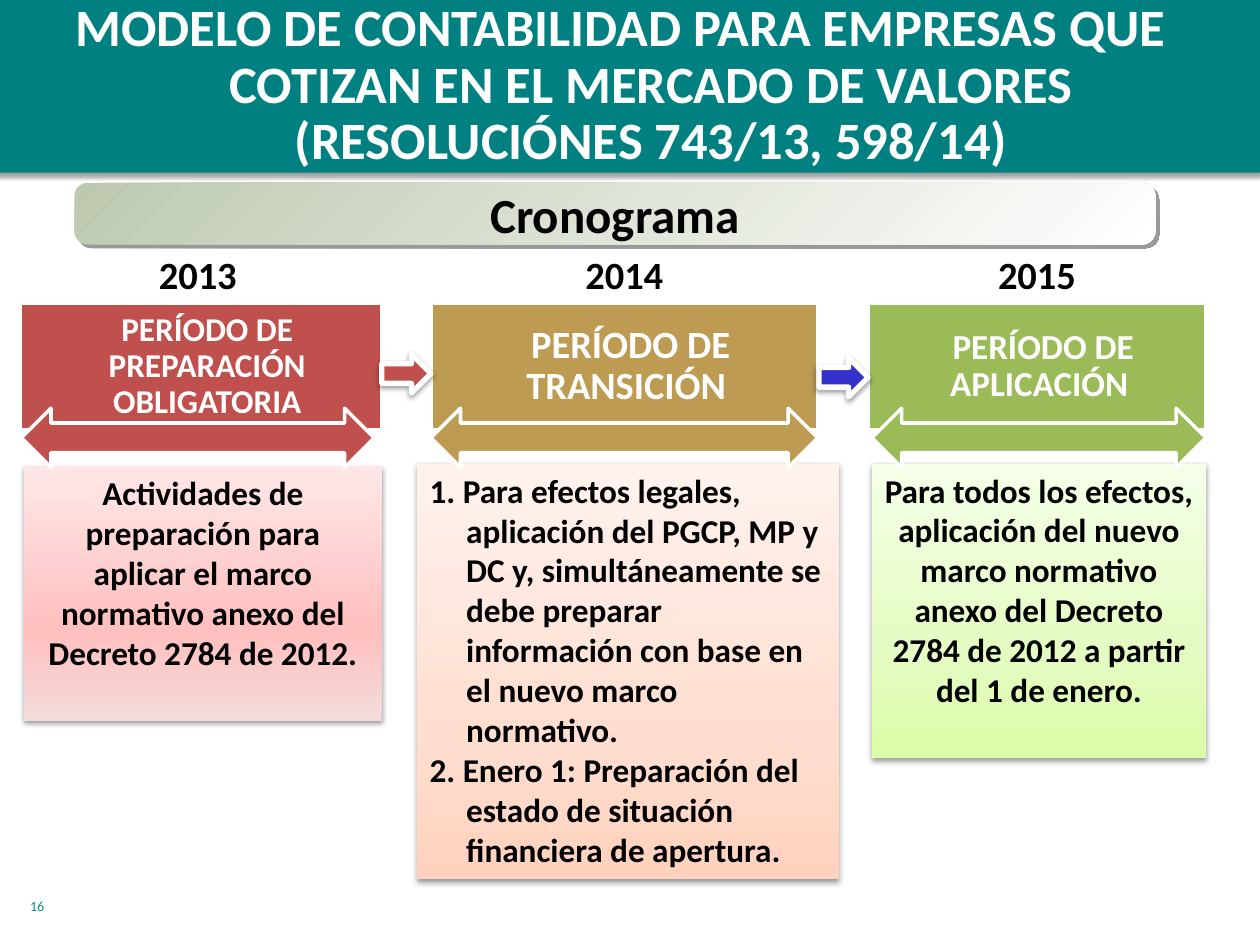
from lxml import etree
from pptx import Presentation
from pptx.dml.color import RGBColor
from pptx.enum.shapes import MSO_SHAPE
from pptx.enum.text import MSO_ANCHOR, MSO_AUTO_SIZE, PP_ALIGN
from pptx.oxml.ns import qn
from pptx.util import Inches, Pt

RECTANGLE = MSO_SHAPE.RECTANGLE
ROUNDED = MSO_SHAPE.ROUNDED_RECTANGLE
RIGHT_ARROW = MSO_SHAPE.RIGHT_ARROW
DOUBLE_ARROW = MSO_SHAPE.LEFT_RIGHT_ARROW
TOP, MIDDLE = MSO_ANCHOR.TOP, MSO_ANCHOR.MIDDLE
LEFT, CENTER = PP_ALIGN.LEFT, PP_ALIGN.CENTER
NO_AUTOFIT = MSO_AUTO_SIZE.NONE

COLORS = {
    "teal": "008080", "number": "00918E", "white": "FFFFFF", "black": "000000",
    "sage": "BDC9AF", "red": "C0504D", "gold": "BD9B53", "green": "9BBB59",
    "blue": "3333CC",
}
RED_FADE = [(0, "F2DCDB"), (35, "FFC0BF"), (100, "FFE7E7")]
GOLD_FADE = [(0, "FFD2BD"), (35, "FFDED0"), (100, "FFF2ED")]
GREEN_FADE = [(0, "DAFDA7"), (35, "E4FCC2"), (100, "F5FFE7")]
SAGE_FADE = [(0, COLORS["sage"]), (100, COLORS["white"])]


class SlideBuilder:
    font_name = "Calibri"

    def __init__(self, page):
        self.page = page

    def place(self, shape, at):
        shape.left, shape.top, shape.width, shape.height = map(Inches, at)

    def shape(self, kind, at, color=None, line_width=None):
        shape = self.page.shapes.add_shape(kind, *map(Inches, at))
        shape.shadow.inherit = False
        if color:
            shape.fill.solid()
            shape.fill.fore_color.rgb = RGBColor.from_string(COLORS[color])
        if line_width:
            shape.line.color.rgb = RGBColor.from_string(COLORS["white"])
            shape.line.width = Pt(line_width)
        else:
            shape.line.fill.background()
        return shape

    def fade(self, shape, stops, angle=90):
        """Fill with a linear gradient; the angle runs counter-clockwise."""
        shape.fill.gradient()
        shape.fill.gradient_angle = angle
        stop_list = shape._element.spPr.find(qn("a:gradFill")).find(qn("a:gsLst"))
        for old_stop in list(stop_list):
            stop_list.remove(old_stop)
        for position, color in stops:
            stop = etree.SubElement(stop_list, qn("a:gs"), pos=str(position * 1000))
            etree.SubElement(stop, qn("a:srgbClr"), val=color)

    def shadow(self, shape, blur=3.1, distance=1.6, angle=90, opacity=38):
        shape.shadow.inherit = False
        effects = shape._element.spPr.find(qn("a:effectLst"))
        outer = etree.SubElement(
            effects, qn("a:outerShdw"), blurRad=str(Pt(blur)), dist=str(Pt(distance)),
            dir=str(angle * 60000), algn="ctr", rotWithShape="0")
        color = etree.SubElement(outer, qn("a:srgbClr"), val=COLORS["black"])
        etree.SubElement(color, qn("a:alpha"), val=str(opacity * 1000))

    def set_text(self, shape, paragraphs, size, color="black", bold=True, align=CENTER,
                 anchor=TOP, hanging=0, line_spacing=None, insets=(0.1, 0.1)):
        frame = shape.text_frame
        frame.word_wrap = True
        frame.auto_size = NO_AUTOFIT
        frame.vertical_anchor = anchor
        frame.margin_left, frame.margin_right = map(Inches, insets)
        frame.margin_top = frame.margin_bottom = Inches(0.05)
        for index, text in enumerate(paragraphs):
            para = frame.paragraphs[0] if index == 0 else frame.add_paragraph()
            para.text = text
            para.alignment = align
            para.space_before = Pt(0)
            if line_spacing:
                para.line_spacing = line_spacing
            properties = para._p.get_or_add_pPr()
            properties.set("marL", str(Inches(hanging)))
            properties.set("indent", str(-Inches(hanging)))
            etree.SubElement(properties, qn("a:buNone"))
            para.font.name = self.font_name
            para.font.size = Pt(size)
            para.font.bold = bold
            para.font.color.rgb = RGBColor.from_string(COLORS[color])

    def text(self, at, text, size, **style):
        box = self.page.shapes.add_textbox(*map(Inches, at))
        self.set_text(box, [text], size, **style)

    def title(self, at, text):
        band = self.shape(RECTANGLE, (-0.04, -0.03, 10.04, 1.4), "teal")
        self.shadow(band)
        title = self.page.shapes.title
        band._element.addnext(title._element)  # keeps the title above its band
        self.place(title, at)
        self.set_text(title, [text], 30, "white", hanging=0.49, line_spacing=0.9)

    def banner(self, at, text):
        banner = self.shape(ROUNDED, at)
        banner.adjustments[0] = 0.217
        self.fade(banner, SAGE_FADE, 315)
        self.shadow(banner, blur=0, distance=3, angle=45, opacity=40)
        self.set_text(banner, [text], 28, anchor=MIDDLE)

    def period(self, left, width, text, size, color):
        box = self.shape(RECTANGLE, (left, 2.41, width, 1), color, 2)
        self.set_text(box, [text], size, "white", anchor=MIDDLE, line_spacing=0.9,
                      insets=(0.62, 0.52))

    def detail(self, at, text, stops):
        box = self.shape(RECTANGLE, at)
        self.fade(box, stops)
        self.shadow(box)
        self.set_text(box, [text], 19)

    def numbered_detail(self, at, items, stops):
        body = self.page.placeholders[1]
        self.place(body, at)
        self.fade(body, stops)
        self.shadow(body)
        self.set_text(body, items, 19, align=LEFT, hanging=0.29)

    def step_arrow(self, left, top, color):
        self.shadow(self.shape(RIGHT_ARROW, (left, top, 0.39, 0.31), color, 3))


def main():
    deck = Presentation()
    deck.slide_width, deck.slide_height = Inches(10), Inches(7.5)
    slide = SlideBuilder(deck.slides.add_slide(deck.slide_layouts[1]))

    slide.title((0.2, -0.04, 9.45, 1.46),
                "MODELO DE CONTABILIDAD PARA EMPRESAS QUE COTIZAN EN EL MERCADO "
                "DE VALORES (RESOLUCIÓNES 743/13, 598/14)")
    slide.text((0.14, 7.07, 2.08, 0.35), "16", 8, color="number", bold=False, align=LEFT)
    slide.banner((0.59, 1.45, 8.58, 0.49), "Cronograma")

    # year, period, size, color, then (left, width) of box, year and double arrow
    periods = [
        ("2013", "PERÍODO DE PREPARACIÓN OBLIGATORIA", 19, "red",
         (0.16, 2.87), (0.17, 2.8), (0.17, 2.8)),
        ("2014", "PERÍODO DE TRANSICIÓN ", 22, "gold",
         (3.42, 3.07), (3.42, 3.07), (3.42, 3.07)),
        ("2015", "PERÍODO DE APLICACIÓN ", 20, "green",
         (6.89, 2.68), (6.89, 2.68), (6.92, 2.65)),
    ]
    for year, period, size, color, box_span, year_span, _ in periods:
        slide.period(*box_span, period, size, color)
        slide.text((year_span[0], 1.94, year_span[1], 0.47), year, 22)

    slide.numbered_detail(
        (3.31, 3.68, 3.35, 3.3),
        ["1. Para efectos legales, aplicación del PGCP, MP y DC y, simultáneamente "
         "se debe preparar información con base en el nuevo marco normativo.",
         "2. Enero 1: Preparación del estado de situación financiera de apertura."],
        GOLD_FADE)
    slide.detail((6.92, 3.68, 2.65, 2.34),
                 "Para todos los efectos, aplicación del nuevo marco normativo anexo "
                 "del Decreto 2784 de 2012 a partir del 1 de enero.", GREEN_FADE)
    slide.detail((0.19, 3.7, 2.84, 2.02),
                 "Actividades de preparación para aplicar el marco normativo anexo "
                 "del Decreto 2784 de 2012.", RED_FADE)

    for _, _, _, color, _, _, (left, width) in periods:
        slide.shape(DOUBLE_ARROW, (left, 3.24, width, 0.47), color, 2)
    slide.step_arrow(3.03, 2.81, "red")
    slide.step_arrow(6.5, 2.84, "blue")

    deck.save("out.pptx")


if __name__ == "__main__":
    main()
